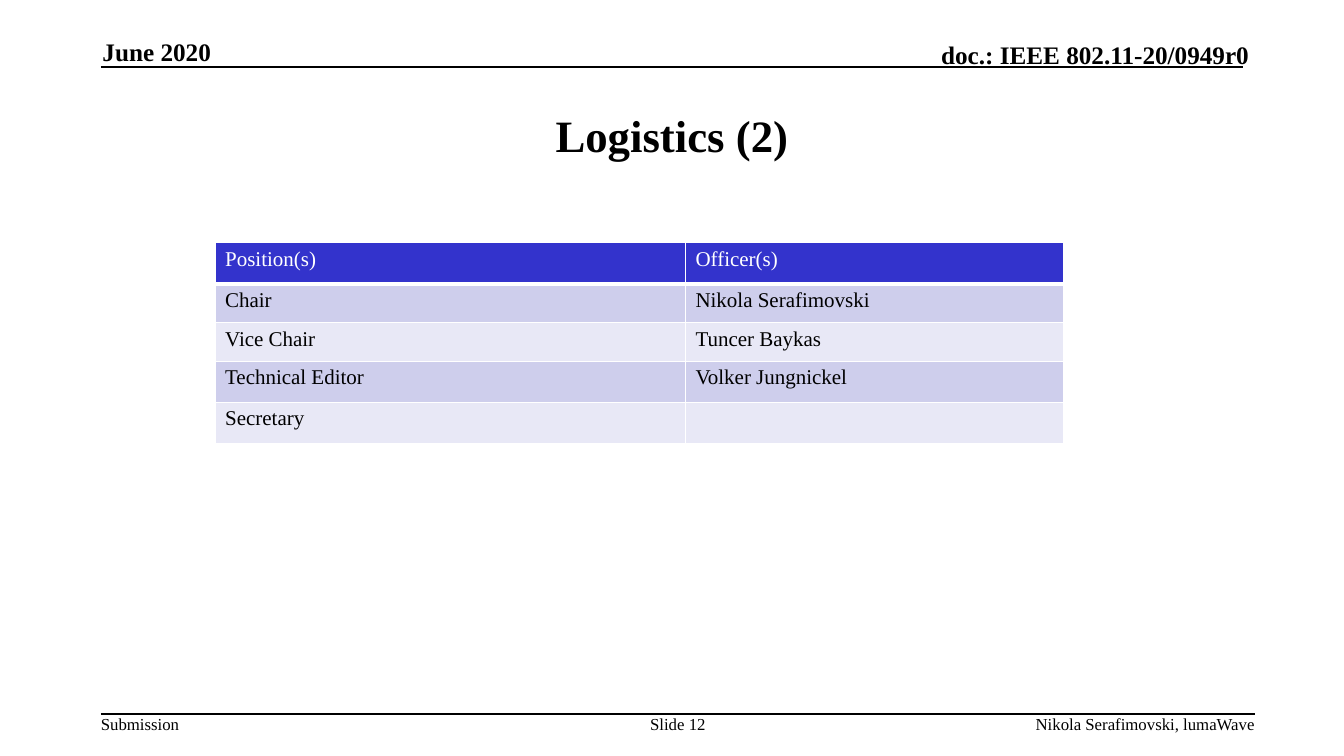
from dataclasses import dataclass
from lxml.etree import SubElement
from pptx import Presentation
from pptx.dml.color import RGBColor as RGB
from pptx.enum.shapes import MSO_CONNECTOR as CONN
from pptx.enum.text import MSO_ANCHOR as ANCHOR, PP_ALIGN as ALIGN
from pptx.oxml import parse_xml
from pptx.oxml.ns import nsdecls, qn
from pptx.util import Inches, Pt


@dataclass(frozen=True)
class Theme:
    font: str = "Times New Roman"
    ink: str = "000000"
    paper: str = "FFFFFF"
    head: str = "3333CC"
    bands: tuple = ("CECEEC", "E8E8F6")
    title: int = 32
    header: int = 18
    body: int = 15
    footer: int = 12


@dataclass(frozen=True)
class Box:
    x: float
    y: float
    w: float
    h: float

    def inner(self, dx, dy, w, h):
        return Box(self.x + dx, self.y + dy, w, h)

    def emu(self):
        return [grid(v) for v in (self.x, self.y, self.w, self.h)]


THEME = Theme()
COLS, ROWS = 160, 90
OFFICERS = [
    ("Position(s)", "Officer(s)"),
    ("Chair", "Nikola Serafimovski"),
    ("Vice Chair", "Tuncer Baykas"),
    ("Technical Editor", "Volker Jungnickel"),
    ("Secretary", ""),
]


def grid(n):
    return Inches(n / 12)


def style(p, size, color=THEME.ink, bold=False, align=ALIGN.LEFT):
    p.alignment = align
    f = p.font
    f.name, f.size, f.bold = THEME.font, Pt(size), bold
    f.color.rgb = RGB.from_string(color)


def add_text(s, box, text, size, bold=False, align=ALIGN.LEFT,
             anchor=ANCHOR.TOP, wrap=True):
    tf = s.shapes.add_textbox(*box.emu()).text_frame
    tf.word_wrap = wrap
    tf.vertical_anchor = anchor
    tf.margin_left = tf.margin_right = tf.margin_top = tf.margin_bottom = 0
    p = tf.paragraphs[0]
    p.text = text
    style(p, size, bold=bold, align=align)


def add_rule(s, x1, x2, y):
    line = s.shapes.add_connector(CONN.STRAIGHT, grid(x1), grid(y), grid(x2), grid(y))
    line.line.color.rgb = RGB.from_string(THEME.ink)
    line.line.width = Pt(1)
    SubElement(line._element.spPr, qn("a:effectLst"))


def add_header(s, box, date, doc):
    add_rule(s, box.x, box.x + box.w, box.y + box.h)
    add_text(s, box.inner(0.2, 0.3, 32.8, 3.6), date, THEME.header, True,
             anchor=ANCHOR.BOTTOM)
    add_text(s, box.inner(75.5, 0.7, 61.2, 3.6), doc, THEME.header, True,
             ALIGN.RIGHT, ANCHOR.BOTTOM)


def add_title(s, box, text):
    add_text(s, box, text, THEME.title, True, ALIGN.CENTER, ANCHOR.MIDDLE)


def add_footer(s, box, left, middle, right):
    add_rule(s, box.x, box.x + box.w, box.y)
    add_text(s, box.inner(0, 0, 9.5, 2.4), left, THEME.footer, wrap=False)
    add_text(s, box.inner(64.1, 0, 9.2, 4.8), middle, THEME.footer, align=ALIGN.CENTER)
    add_text(s, box.inner(box.w - 55.7, 0, 55.7, 2.4), right, THEME.footer,
             align=ALIGN.RIGHT)


def set_borders(cell, widths):
    tc_pr = cell._tc.get_or_add_tcPr()
    for i, (side, width) in enumerate(widths.items()):
        tc_pr.insert(i, parse_xml(
            f'<a:ln{side} {nsdecls("a")} w="{Pt(width)}"><a:solidFill>'
            f'<a:srgbClr val="{THEME.paper}"/></a:solidFill></a:ln{side}>'))


def add_officers(s, box, rows, widths, heights):
    table = s.shapes.add_table(len(rows), len(widths), *box.emu()).table
    table.first_row = table.horz_banding = False
    for col, w in zip(table.columns, widths):
        col.width = grid(w)
    for r, (row, h) in enumerate(zip(rows, heights)):
        table.rows[r].height = grid(h)
        head = r == 0
        fill = THEME.head if head else THEME.bands[(r - 1) % 2]
        for c, text in enumerate(row):
            cell = table.cell(r, c)
            cell.fill.solid()
            cell.fill.fore_color.rgb = RGB.from_string(fill)
            set_borders(cell, {"L": 1, "R": 1, "T": 3 if r == 1 else 1,
                               "B": 3 if head else 1})
            p = cell.text_frame.paragraphs[0]
            if text:
                p.text = text
            style(p, THEME.body, THEME.paper if head else THEME.ink)


def main():
    prs = Presentation()
    prs.slide_width, prs.slide_height = grid(COLS), grid(ROWS)
    s = prs.slides.add_slide(prs.slide_layouts[6])
    add_header(s, Box(12, 4, 136, 4), "June 2020", "doc.: IEEE 802.11-20/0949r0")
    add_title(s, Box(12, 9, 136, 14), "Logistics (2)")
    add_officers(s, Box(25.6, 28.9, 101, 23.8), OFFICERS,
                 (56, 45), (4.9, 4.6, 4.6, 4.9, 4.9))
    add_footer(s, Box(12, 85, 137.4, 5), "Submission", "Slide 12",
               "Nikola Serafimovski, lumaWave")
    prs.save("out.pptx")


if __name__ == "__main__":
    main()
